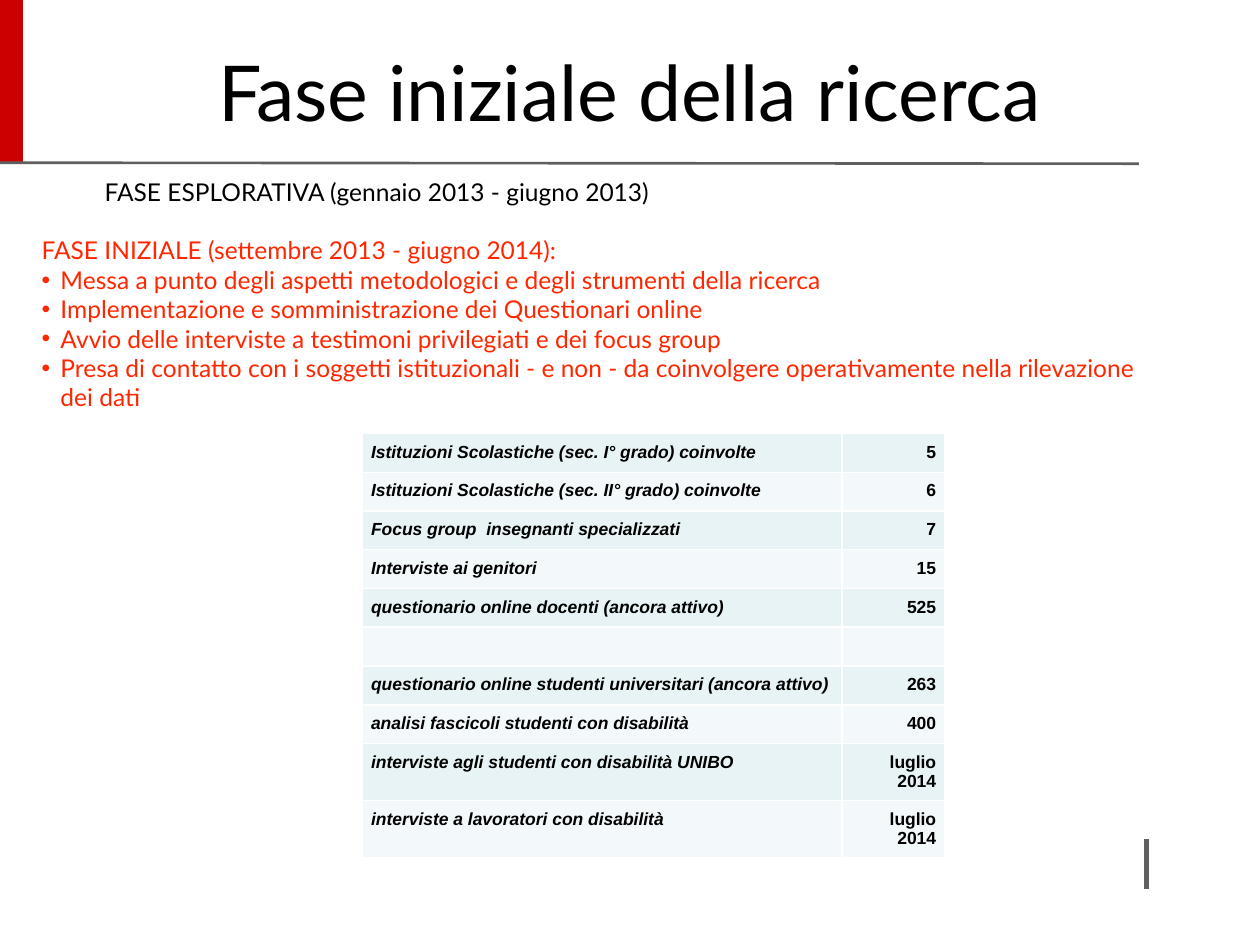
from dataclasses import dataclass

from lxml import etree
from pptx import Presentation
from pptx.dml.color import RGBColor
from pptx.enum import shapes, text
from pptx.oxml import ns
from pptx.util import Cm, Pt

BLACK, RED, GREY = "000000", "FF2600", "5F5F5F"
BANDS = ("E7F3F4", "F3F9FA")
INSET = Cm(0.13)
INDENT = Cm(0.38)


@dataclass
class Rule:
    start: tuple[float, float]
    end: tuple[float, float]
    color: str
    width: float


@dataclass
class Line:
    words: str
    color: str = RED
    bullet: bool = False
    left: float = 0
    before: float = 0
    align: text.PP_ALIGN = text.PP_ALIGN.LEFT


RULES = [
    Rule((0.23, 0), (0.23, 3.3), "CC0000", 13.5),
    Rule((0, 3.28), (22.96, 3.3), GREY, 1.5),
    Rule((23.11, 16.92), (23.11, 17.93), GREY, 3),
]

LINES = [
    Line("FASE ESPLORATIVA (gennaio 2013 - giugno 2013)", BLACK, left=1.27,
         align=text.PP_ALIGN.JUSTIFY),
    Line("FASE INIZIALE (settembre 2013 - giugno 2014):", before=16.8),
    Line("Messa a punto degli aspetti metodologici e degli strumenti della ricerca", bullet=True),
    Line("Implementazione e somministrazione dei Questionari online", bullet=True),
    Line("Avvio delle interviste a testimoni privilegiati e dei focus group", bullet=True),
    Line("Presa di contatto con i soggetti istituzionali - e non - da coinvolgere "
         "operativamente nella rilevazione dei dati", bullet=True),
]

COUNTS = [
    ("Istituzioni Scolastiche (sec. I° grado) coinvolte", "5"),
    ("Istituzioni Scolastiche (sec. II° grado) coinvolte", "6"),
    ("Focus group  insegnanti specializzati", "7"),
    ("Interviste ai genitori", "15"),
    ("questionario online docenti (ancora attivo)", "525"),
    ("", ""),
    ("questionario online studenti universitari (ancora attivo)", "263"),
    ("analisi fascicoli studenti con disabilità", "400"),
    ("interviste agli studenti con disabilità UNIBO", "luglio 2014"),
    ("interviste a lavoratori con disabilità", "luglio 2014"),
]


def rgb(color: str) -> RGBColor:
    return RGBColor.from_string(color)


def add_rule(page, rule: Rule) -> None:
    line = page.shapes.add_connector(
        shapes.MSO_CONNECTOR.STRAIGHT, *map(Cm, rule.start + rule.end))
    line.line.color.rgb = rgb(rule.color)
    line.line.width = Pt(rule.width)
    etree.SubElement(line._element.spPr, ns.qn("a:effectLst"))


def add_box(page, left: float, top: float, width: float, height: float):
    box = page.shapes.add_textbox(Cm(left), Cm(top), Cm(width), Cm(height))
    frame = box.text_frame
    frame.word_wrap = True
    frame.margin_left = frame.margin_right = INSET
    frame.margin_top = frame.margin_bottom = INSET
    return frame


def add_span(para, words: str, font: str, size: float, color: str,
             bold: bool = False, italic: bool = False) -> None:
    span = para.add_run()
    span.text = words
    span.font.name = font
    span.font.size = Pt(size)
    span.font.color.rgb = rgb(color)
    span.font.bold = bold
    span.font.italic = italic


def add_line(para, line: Line) -> None:
    para.alignment = line.align
    if line.before:
        para.space_before = Pt(line.before)
    props = para._p.get_or_add_pPr()
    if line.bullet:
        props.set("marL", str(INDENT))
        props.set("indent", str(-INDENT))
        etree.SubElement(props, ns.qn("a:buFont"), typeface="Arial")
        etree.SubElement(props, ns.qn("a:buChar"), char="•")
    elif line.left:
        props.set("marL", str(Cm(line.left)))
    add_span(para, line.words, "Lato", 14, line.color)


def fill_cell(cell, words: str, band: str, is_label: bool) -> None:
    cell.fill.solid()
    cell.fill.fore_color.rgb = rgb(band)
    cell.margin_left = cell.margin_right = Cm(0.18)
    cell.margin_top = cell.margin_bottom = Cm(0.18)
    para = cell.text_frame.paragraphs[0]
    para.alignment = text.PP_ALIGN.LEFT if is_label else text.PP_ALIGN.RIGHT
    if words:
        add_span(para, words, "Arial", 10, BLACK, bold=True, italic=is_label)
    else:
        # Keep the empty row as low as the others
        etree.SubElement(para._p, ns.qn("a:endParaRPr"), sz="1000")


def add_counts(page) -> None:
    widths = (9.67, 2.08)
    row_height = 0.78
    table = page.shapes.add_table(
        len(COUNTS), len(widths), Cm(7.3), Cm(8.74),
        Cm(sum(widths)), Cm(row_height * len(COUNTS))).table
    table.first_row = False
    table.horz_banding = False
    for column, width in zip(table.columns, widths):
        column.width = Cm(width)
    for index, (row, values) in enumerate(zip(table.rows, COUNTS)):
        row.height = Cm(row_height)
        for place, (cell, words) in enumerate(zip(row.cells, values)):
            fill_cell(cell, words, BANDS[index % 2], place == 0)


def main() -> None:
    deck = Presentation()
    deck.slide_width, deck.slide_height = Cm(25.4), Cm(19.05)
    page = deck.slides.add_slide(deck.slide_layouts[6])

    # Frame lines
    for rule in RULES:
        add_rule(page, rule)

    # Table of counts
    add_counts(page)

    # Research phases
    frame = add_box(page, 0.71, 3.43, 22.63, 6.45)
    for index, line in enumerate(LINES):
        add_line(frame.add_paragraph() if index else frame.paragraphs[0], line)

    # Title
    para = add_box(page, 1.27, 0.76, 22.86, 3.68).paragraphs[0]
    para.alignment = text.PP_ALIGN.CENTER
    add_span(para, "Fase iniziale della ricerca", "Lato", 44, BLACK)

    deck.save("out.pptx")


if __name__ == "__main__":
    main()
